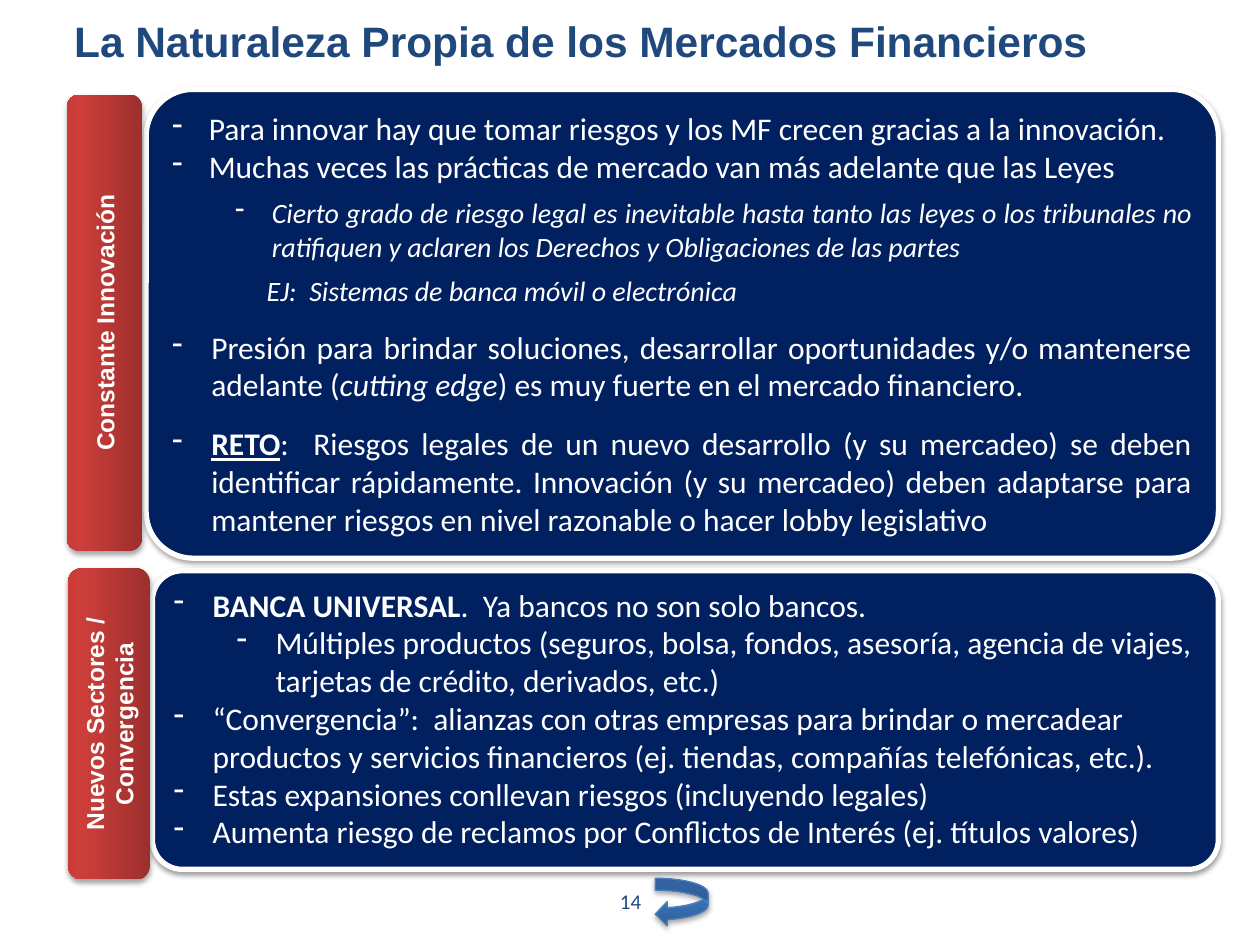
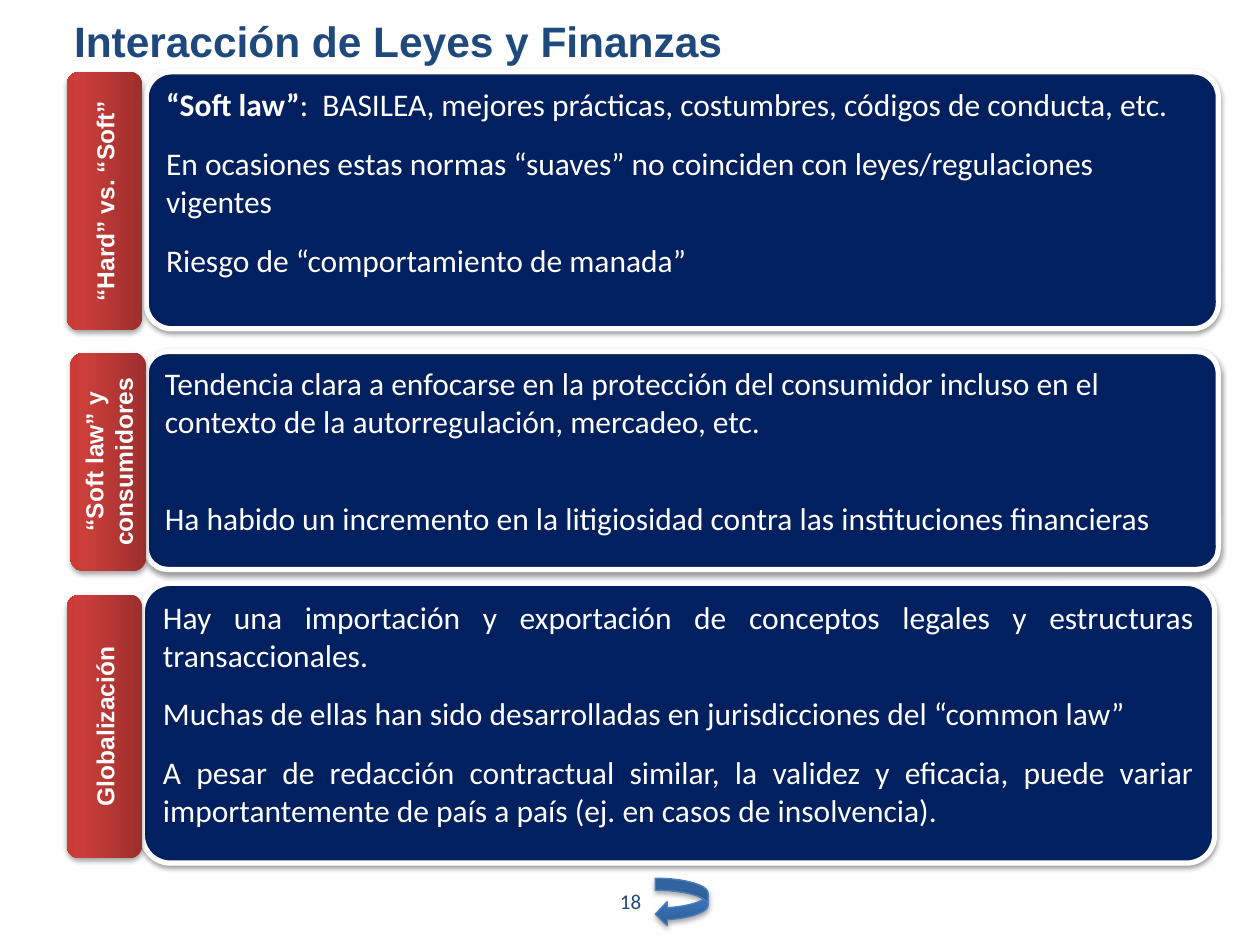
import pptx
import pptx.util
import pptx.oxml
import pptx.oxml.ns
import pptx.dml.color
import pptx.enum.shapes
import pptx.enum.text
from dataclasses import dataclass

Inches = pptx.util.Inches
Pt = pptx.util.Pt
Shapes = pptx.enum.shapes.MSO_SHAPE
Anchor = pptx.enum.text.MSO_ANCHOR
Align = pptx.enum.text.PP_ALIGN


@dataclass(frozen=True)
class Theme:
    navy: str = "002060"
    blue: str = "1F497D"
    white: str = "FFFFFF"
    arrow_edge: str = "4B7EBC"
    red_stops: tuple = ((0, "9C2F2D"), (80, "CB3E3A"), (100, "CE3B37"))
    blue_stops: tuple = ((0, "2F5F99"), (80, "3D7CC7"), (100, "3A7CCB"))
    panel_shadow: tuple = (38, 1.6)
    raised_shadow: tuple = (35, 1.8)
    heading_font: str = "Arial"
    body_font: str = "Calibri"
    title_size: float = 24.3
    body_size: float = 18
    detail_size: float = 16
    tab_size: float = 14
    page_size: float = 12


THEME = Theme()


@dataclass(frozen=True)
class Style:
    margin: float = 0
    hang: float = 0
    before: float = 0
    after: float = 0
    size: float = THEME.body_size
    justify: bool = False


STYLES = {
    "lead": Style(0.29, 0.29, justify=True),
    "detail": Style(0.79, 0.29, 6, 6, THEME.detail_size, True),
    "example": Style(0.75, size=THEME.detail_size, justify=True),
    "spaced": Style(0.31, 0.31, 12, justify=True),
    "item": Style(0.31, 0.31),
    "subitem": Style(0.81, 0.31),
    "plain": Style(before=12),
    "close": Style(before=6),
    "apart": Style(before=34),
    "block": Style(before=12, justify=True),
}

SLIDES = [
    {
        "title": "La Naturaleza Propia de los Mercados Financieros",
        "page": "14",
        "sections": [
            {
                "label": "Constante Innovación",
                "tab": (0.53, 0.75, 0.6, 3.62),
                "panel": (1.16, 0.71, 8.51, 3.72),
                "text": [
                    ("lead", [("Para innovar hay que tomar riesgos y los MF crecen gracias a la innovación.", "")]),
                    ("lead", [("Muchas veces las prácticas de mercado van más adelante que las Leyes", "")]),
                    ("detail", [("Cierto grado de riesgo legal es inevitable hasta tanto las leyes o los "
                                 "tribunales no ratifiquen y aclaren los Derechos y Obligaciones de las partes", "i")]),
                    ("example", [("EJ:  Sistemas de banca móvil o electrónica", "i")]),
                    ("spaced", [("Presión para brindar soluciones, desarrollar oportunidades y/o "
                                 "mantenerse adelante (", ""),
                                ("cutting edge", "i"),
                                (") es muy fuerte en el mercado financiero.", "")]),
                    ("spaced", [("RETO", "bu"),
                                (":  Riesgos legales de un nuevo desarrollo (y su mercadeo) se deben "
                                 "identificar rápidamente. Innovación (y su mercadeo) deben adaptarse para "
                                 "mantener riesgos en nivel razonable o hacer lobby legislativo", "")]),
                ],
            },
            {
                "label": "Nuevos Sectores / Convergencia",
                "tab": (0.54, 4.51, 0.65, 2.47),
                "panel": (1.21, 4.53, 8.46, 2.37),
                "text": [
                    ("item", [("BANCA UNIVERSAL", "b"), (".  Ya bancos no son solo bancos.", "")]),
                    ("subitem", [("Múltiples productos (seguros, bolsa, fondos, asesoría, agencia de "
                                  "viajes, tarjetas de crédito, derivados, etc.)", "")]),
                    ("item", [("“Convergencia”:  alianzas con otras empresas para brindar o mercadear "
                               "productos y servicios financieros (ej. tiendas, compañías telefónicas, etc.).", "")]),
                    ("item", [("Estas expansiones conllevan riesgos (incluyendo legales)", "")]),
                    ("item", [("Aumenta riesgo de reclamos por Conflictos de Interés (ej. títulos valores)", "")]),
                ],
            },
        ],
    },
    {
        "title": "Interacción de Leyes y Finanzas",
        "page": "18",
        "sections": [
            {
                "label": "“Hard” vs. “Soft”",
                "tab": (0.53, 0.57, 0.6, 2.05),
                "panel": (1.16, 0.57, 8.51, 2.04),
                "text": [
                    ("plain", [("“Soft law”", "b"),
                               (":  BASILEA, mejores prácticas, costumbres, códigos de conducta, etc.", "")]),
                    ("plain", [("En ocasiones estas normas “suaves” no coinciden con "
                                "leyes/regulaciones vigentes", "")]),
                    ("plain", [("Riesgo de “comportamiento de manada”", "")]),
                ],
            },
            {
                "label": "“Soft law” y consumidores",
                "tab": (0.56, 2.8, 0.6, 1.73),
                "panel": (1.16, 2.79, 8.51, 1.73),
                "text": [
                    ("close", [("Tendencia clara a enfocarse en la protección del consumidor incluso en el "
                                "contexto de la autorregulación, mercadeo, etc.", "")]),
                    ("apart", [("Ha habido un incremento en la litigiosidad contra las "
                                "instituciones financieras", "")]),
                ],
            },
            {
                "label": "Globalización",
                "tab": (0.53, 4.72, 0.6, 2.09),
                "panel": (1.13, 4.63, 8.51, 2.22),
                "text": [
                    ("block", [("Hay una importación y exportación de conceptos legales y estructuras "
                                "transaccionales.", "")]),
                    ("block", [("Muchas de ellas han sido desarrolladas en jurisdicciones del “common law”", "")]),
                    ("block", [("A pesar de redacción contractual similar, la validez y eficacia, puede variar "
                                "importantemente de país a país (ej. en casos de insolvencia).", "")]),
                ],
            },
        ],
    },
]


def rgb(value):
    return pptx.dml.color.RGBColor.from_string(value)


def drawing(tag, attributes="", inner=""):
    return pptx.oxml.parse_xml(
        f'<a:{tag} {pptx.oxml.ns.nsdecls("a")} {attributes}>{inner}</a:{tag}>')


def add_gradient(shape, stops):
    marks = "".join(f'<a:gs pos="{pos * 1000}"><a:srgbClr val="{color}"/></a:gs>' for pos, color in stops)
    shape.element.spPr.append(drawing(
        "gradFill", 'rotWithShape="1"', f'<a:gsLst>{marks}</a:gsLst><a:lin ang="16200000" scaled="0"/>'))


def add_shadow(shape, alpha, distance):
    shape.shadow.inherit = False
    effects = shape.element.spPr.find(pptx.oxml.ns.qn("a:effectLst"))
    effects.append(drawing(
        "outerShdw",
        f'blurRad="{Pt(3.1)}" dist="{Pt(distance)}" dir="5400000" rotWithShape="0"',
        f'<a:srgbClr val="000000"><a:alpha val="{alpha * 1000}"/></a:srgbClr>'))


def set_line(shape, color, width):
    shape.line.color.rgb = rgb(color)
    shape.line.width = Pt(width)


def format_run(run, font, size, color, flags=""):
    run.font.name = font
    run.font.size = Pt(size)
    run.font.color.rgb = rgb(color)
    run.font.bold = "b" in flags
    run.font.italic = "i" in flags
    run.font.underline = "u" in flags


def write_line(shape, text, font, size, color, flags="", align=Align.CENTER, anchor=Anchor.MIDDLE):
    frame = shape.text_frame
    frame.text = text
    frame.word_wrap = True
    frame.vertical_anchor = anchor
    frame.paragraphs[0].alignment = align
    format_run(frame.paragraphs[0].runs[0], font, size, color, flags)


def write_paragraph(paragraph, style, pieces):
    paragraph.alignment = Align.JUSTIFY if style.justify else Align.LEFT
    paragraph.space_before = Pt(style.before)
    paragraph.space_after = Pt(style.after)
    properties = paragraph._p.get_or_add_pPr()
    properties.set("marL", str(Inches(style.margin)))
    properties.set("indent", str(-Inches(style.hang)))
    properties.append(drawing("buChar", 'char="-"') if style.hang else drawing("buNone"))
    for text, flags in pieces:
        run = paragraph.add_run()
        run.text = text
        format_run(run, THEME.body_font, style.size, THEME.white, flags)


def add_panel(slide, box, text):
    panel = slide.shapes.add_shape(Shapes.ROUNDED_RECTANGLE, *map(Inches, box))
    panel.adjustments[0] = 0.1
    panel.fill.solid()
    panel.fill.fore_color.rgb = rgb(THEME.navy)
    set_line(panel, THEME.white, 3)
    add_shadow(panel, *THEME.panel_shadow)
    frame = panel.text_frame
    frame.word_wrap = True
    frame.vertical_anchor = Anchor.TOP
    for index, (style, pieces) in enumerate(text):
        paragraph = frame.add_paragraph() if index else frame.paragraphs[0]
        write_paragraph(paragraph, STYLES[style], pieces)


def add_tab(slide, box, label):
    left, top, width, height = box
    shift = (height - width) / 2
    tab = slide.shapes.add_shape(
        Shapes.ROUNDED_RECTANGLE, *map(Inches, (left - shift, top + shift, height, width)))
    tab.rotation = 270
    add_gradient(tab, THEME.red_stops)
    tab.line.fill.background()
    add_shadow(tab, *THEME.raised_shadow)
    write_line(tab, label, THEME.heading_font, THEME.tab_size, THEME.white, "b")


def add_title(slide, text):
    title = slide.shapes.add_textbox(*map(Inches, (0.49, 0.06, 9, 0.91)))
    title.text_frame.margin_top = Inches(0.06)
    write_line(title, text, THEME.heading_font, THEME.title_size, THEME.blue, "b", Align.LEFT, Anchor.TOP)


def add_footer(slide, page):
    number = slide.shapes.add_textbox(*map(Inches, (3.42, 6.95, 3.17, 0.4)))
    write_line(number, page, THEME.body_font, THEME.page_size, THEME.blue)
    back_arrow = slide.shapes.add_shape(Shapes.CURVED_LEFT_ARROW, *map(Inches, (5.2, 6.97, 0.42, 0.38)))
    add_gradient(back_arrow, THEME.blue_stops)
    set_line(back_arrow, THEME.arrow_edge, 0.75)
    add_shadow(back_arrow, *THEME.raised_shadow)


def main():
    deck = pptx.Presentation()
    deck.slide_width, deck.slide_height = Inches(10), Inches(7.5)
    for content in SLIDES:
        slide = deck.slides.add_slide(deck.slide_layouts[6])
        for section in content["sections"]:
            add_panel(slide, section["panel"], section["text"])
            add_tab(slide, section["tab"], section["label"])
        add_title(slide, content["title"])
        add_footer(slide, content["page"])
    deck.save("out.pptx")


if __name__ == "__main__":
    main()
